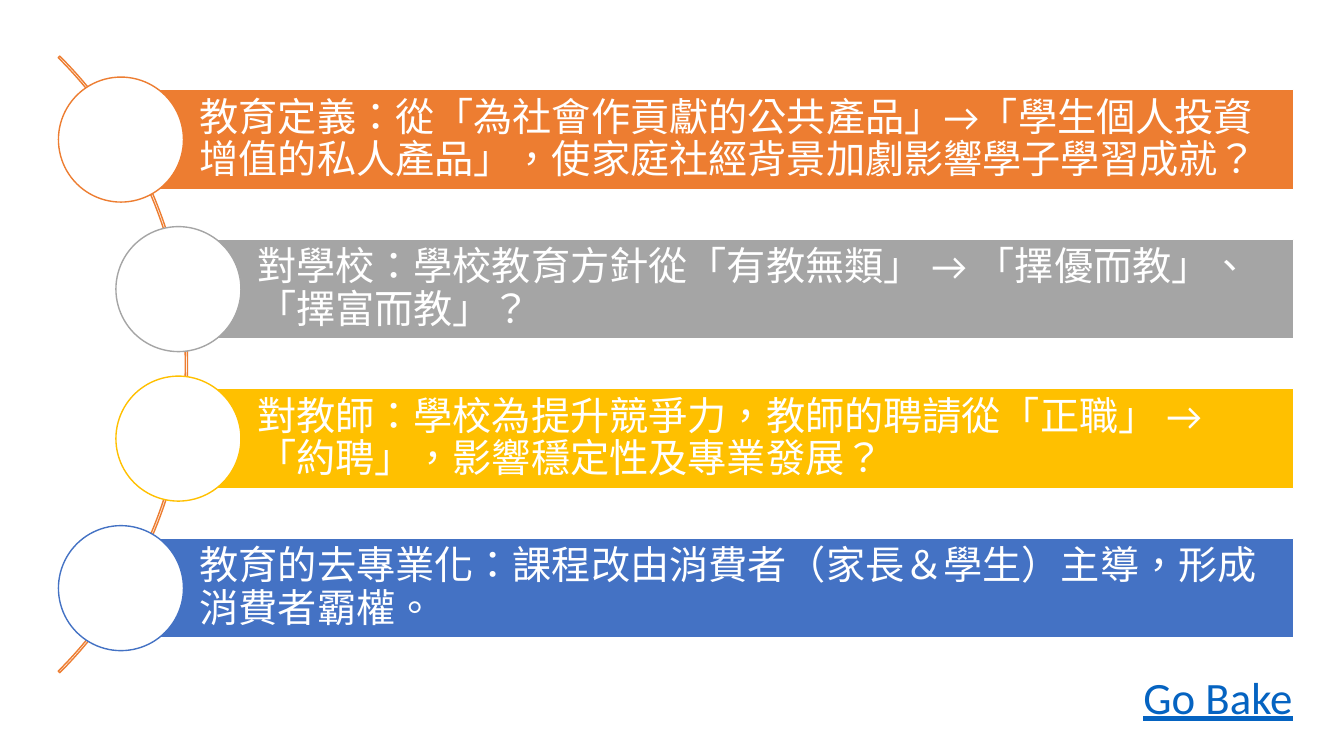
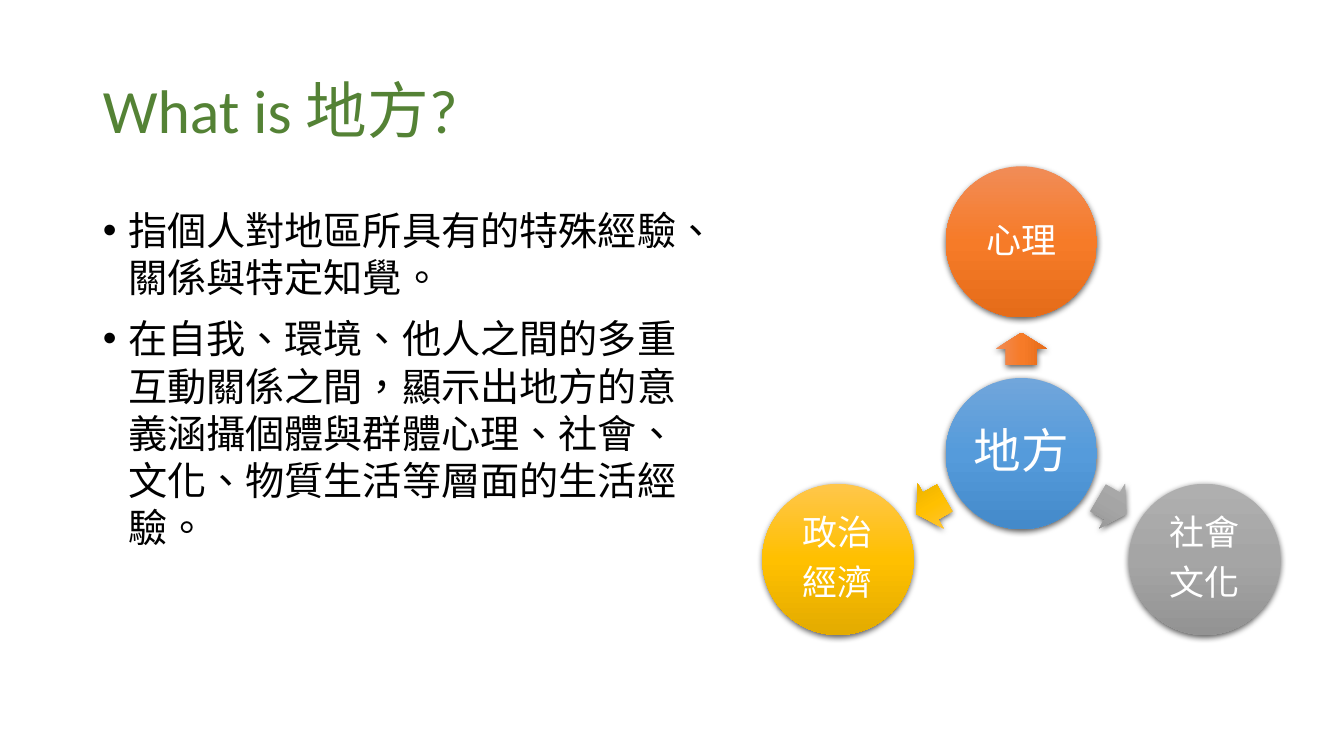
from dataclasses import dataclass
from math import cos, radians, sin

from lxml import etree
from pptx import Presentation
from pptx.dml.color import RGBColor
from pptx.enum.shapes import MSO_SHAPE
from pptx.enum.text import MSO_ANCHOR, MSO_AUTO_SIZE, PP_ALIGN
from pptx.oxml import parse_xml
from pptx.oxml.ns import nsdecls, qn
from pptx.util import Inches, Pt

# Shared look
FONT, ARROW_FONT = "Calibri", "Noto Sans CJK TC"
WHITE, BLACK, TITLE_GREEN, LINK_BLUE = "FFFFFF", "000000", "548235", "0563C1"
ORANGE, GRAY, GOLD, BLUE = "ED7D31", "A5A5A5", "FFC000", "4472C4"
TIGHT = 0.9


@dataclass
class Issue:
    texts: list[str]
    color: str
    left: float


@dataclass
class Facet:
    lines: list[str]
    stops: tuple[str, str, str]
    angle: int


ISSUES = [
    Issue(["教育定義：從「為社會作貢獻的公共產品」", "→",
           "「學生個人投資增值的私人產品」，使家庭社經背景加劇影響學子學習成就？"], ORANGE, 1.2),
    Issue(["對學校：學校教育方針從「有教無類」", " → ",
           "「擇優而教」、「擇富而教」？"], GRAY, 1.77),
    Issue(["對教師：學校為提升競爭力，教師的聘請從「正職」", " → ",
           "「約聘」，影響穩定性及專業發展？"], GOLD, 1.77),
    Issue(["教育的去專業化：課程改由消費者（家長＆學生）主導，形成消費者霸權。"], BLUE, 1.2),
]
FACETS = [
    Facet(["心理"], ("F18C57", "F67B28", "E56C19"), 270),
    Facet(["社會", "文化"], ("AFAFAF", "A5A5A5", "939393"), 30),
    Facet(["政治", "經濟"], ("FFC64B", "FFC000", "E3AB00"), 150),
]
PLACE_STOPS = ("71A6DB", "559BDB", "448ACA")
DEFINITION = [
    "指個人對地區所具有的特殊經驗、關係與特定知覺。",
    "在自我、環境、他人之間的多重互動關係之間，顯示出地方的意義涵攝個體與群體心理、社會、"
    "文化、物質生活等層面的生活經驗。",
]


def rgb(color: str) -> RGBColor:
    return RGBColor.from_string(color)


def add_run(p, text: str, size: float, color: str, font: str = FONT):
    r = p.add_run()
    r.text = text
    r.font.size, r.font.name = Pt(size), font
    r.font.color.rgb = rgb(color)
    rPr = r._r.get_or_add_rPr()
    rPr.set("lang", "zh-TW")
    ea = etree.Element(qn("a:ea"), typeface=FONT)
    rPr.find(qn("a:latin")).addnext(ea)
    return r


def set_frame(tf, insets: tuple[float, float, float, float], anchor=MSO_ANCHOR.MIDDLE) -> None:
    tf.word_wrap, tf.auto_size, tf.vertical_anchor = True, MSO_AUTO_SIZE.NONE, anchor
    tf.margin_left, tf.margin_top, tf.margin_right, tf.margin_bottom = map(Inches, insets)


def add_shape(s, kind, left: float, top: float, width: float, height: float,
              fill: str | None = None, line: str | None = None):
    sp = s.shapes.add_shape(kind, Inches(left), Inches(top), Inches(width), Inches(height))
    sp.shadow.inherit = False
    if fill:
        sp.fill.solid()
        sp.fill.fore_color.rgb = rgb(fill)
    else:
        sp.fill.background()
    if line:
        sp.line.color.rgb, sp.line.width = rgb(line), Pt(1)
    else:
        sp.line.fill.background()
    return sp


def add_glossy(s, kind, cx: float, cy: float, width: float, height: float,
               stops: tuple[str, str, str]):
    """Centred shape with a three-stop gradient and a soft shadow."""
    sp = add_shape(s, kind, cx - width / 2, cy - height / 2, width, height)
    spPr = sp._element.spPr
    gs = "".join(f'<a:gs pos="{i * 50000}"><a:srgbClr val="{c}"/></a:gs>'
                 for i, c in enumerate(stops))
    grad = parse_xml(f'<a:gradFill {nsdecls("a")} rotWithShape="1"><a:gsLst>{gs}</a:gsLst>'
                     '<a:lin ang="5400000" scaled="0"/></a:gradFill>')
    spPr.replace(spPr.find(qn("a:noFill")), grad)
    spPr.find(qn("a:effectLst")).append(parse_xml(
        f'<a:outerShdw {nsdecls("a")} blurRad="57150" dist="19050" dir="5400000" '
        'algn="ctr" rotWithShape="0"><a:srgbClr val="000000"><a:alpha val="63000"/>'
        '</a:srgbClr></a:outerShdw>'))
    return sp


def add_ball(s, cx: float, cy: float, lines: list[str], size: float,
             stops: tuple[str, str, str], inset: float) -> None:
    tf = add_glossy(s, MSO_SHAPE.OVAL, cx, cy, 1.5, 1.5, stops).text_frame
    set_frame(tf, (inset,) * 4)
    for i, text in enumerate(lines):
        p = tf.add_paragraph() if i else tf.paragraphs[0]
        p.alignment, p.line_spacing, p.space_after = PP_ALIGN.CENTER, TIGHT, Pt(size * 0.35)
        add_run(p, text, size, WHITE)


def add_issue(s, issue: Issue, top: float) -> None:
    height, dot = 0.99, 1.24
    bar = add_shape(s, MSO_SHAPE.RECTANGLE, issue.left, top, 12.83 - issue.left, height,
                    issue.color, WHITE)
    set_frame(bar.text_frame, (0.78, 0.08, 0.08, 0.08))
    p = bar.text_frame.paragraphs[0]
    p.alignment, p.line_spacing = PP_ALIGN.LEFT, TIGHT
    for text in issue.texts:
        add_run(p, text, 28, WHITE, ARROW_FONT if text.strip() == "→" else FONT)
    add_shape(s, MSO_SHAPE.OVAL, issue.left - dot / 2, top + (height - dot) / 2, dot, dot,
              WHITE, issue.color)


def build_issues(prs) -> None:
    s = prs.slides.add_slide(prs.slide_layouts[6])
    # Thin arc behind the circles
    arc = add_shape(s, MSO_SHAPE.BLOCK_ARC, -6.79, -0.71, 8.65, 8.65, line=ORANGE)
    for i, value in enumerate((189, 27, 0.0025)):
        arc.adjustments[i] = value
    for i, issue in enumerate(ISSUES):
        add_issue(s, issue, 0.89 + i * 4.45 / 3)
    # Corner label
    tf = s.shapes.add_textbox(Inches(11.22), Inches(6.65), Inches(1.7), Inches(0.59)).text_frame
    tf.word_wrap, tf.auto_size = False, MSO_AUTO_SIZE.SHAPE_TO_FIT_TEXT
    p = tf.paragraphs[0]
    p.alignment, p.line_spacing = PP_ALIGN.RIGHT, TIGHT
    add_run(p, "Go Bake", 32, LINK_BLUE).font.underline = True


def place(sp, left: float, top: float, width: float, height: float) -> None:
    sp.left, sp.top, sp.width, sp.height = map(Inches, (left, top, width, height))


def build_place(prs) -> None:
    s = prs.slides.add_slide(prs.slide_layouts[1])
    # Title
    title, body = s.shapes.title, s.placeholders[1]
    place(title, 0.92, 0.4, 11.5, 1.45)
    set_frame(title.text_frame, (0.1, 0.05, 0.1, 0.05))
    p = title.text_frame.paragraphs[0]
    p.alignment, p.line_spacing = PP_ALIGN.LEFT, TIGHT
    add_run(p, "What is 地方?", 44, TITLE_GREEN)
    # Definition list
    place(body, 0.92, 2, 6.07, 4.76)
    tf = body.text_frame
    set_frame(tf, (0.1, 0.05, 0.1, 0.05), MSO_ANCHOR.TOP)
    for i, text in enumerate(DEFINITION):
        p = tf.add_paragraph() if i else tf.paragraphs[0]
        p.space_before, p.line_spacing = Pt(10 if i else 0), 1.0
        pPr = p._p.get_or_add_pPr()
        pPr.set("marL", str(Inches(0.25)))
        pPr.set("indent", str(-Inches(0.25)))
        etree.SubElement(pPr, qn("a:buFont"), typeface="Arial")
        etree.SubElement(pPr, qn("a:buChar"), char="•")
        add_run(p, text, 28, BLACK)
    # Radial diagram
    cx, cy = 10.13, 4.5
    add_ball(s, cx, cy, ["地方"], 34, PLACE_STOPS, 0.05)
    for facet in FACETS:
        dx, dy = cos(radians(facet.angle)), sin(radians(facet.angle))
        arrow = add_glossy(s, MSO_SHAPE.RIGHT_ARROW, cx + 1.04 * dx, cy + 1.04 * dy,
                           0.32, 0.51, facet.stops)
        arrow.rotation = facet.angle
        arrow.adjustments[0], arrow.adjustments[1] = 0.6, 0.5
        add_ball(s, cx + 2.1 * dx, cy + 2.1 * dy, facet.lines, 25, facet.stops, 0.03)


def main() -> None:
    prs = Presentation()
    prs.slide_width, prs.slide_height = Inches(13.33), Inches(7.5)
    build_issues(prs)
    build_place(prs)
    prs.save("out.pptx")


if __name__ == "__main__":
    main()
